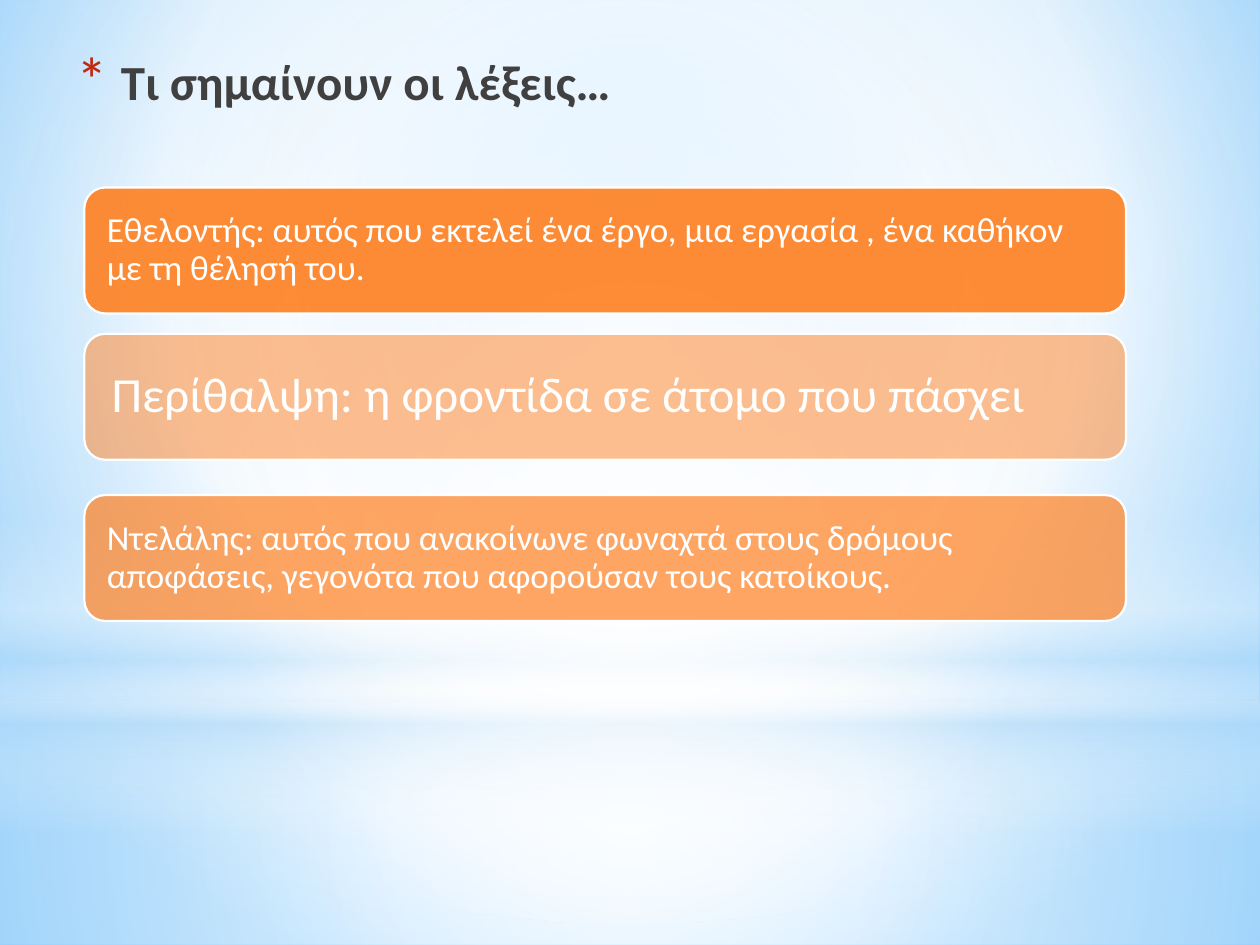
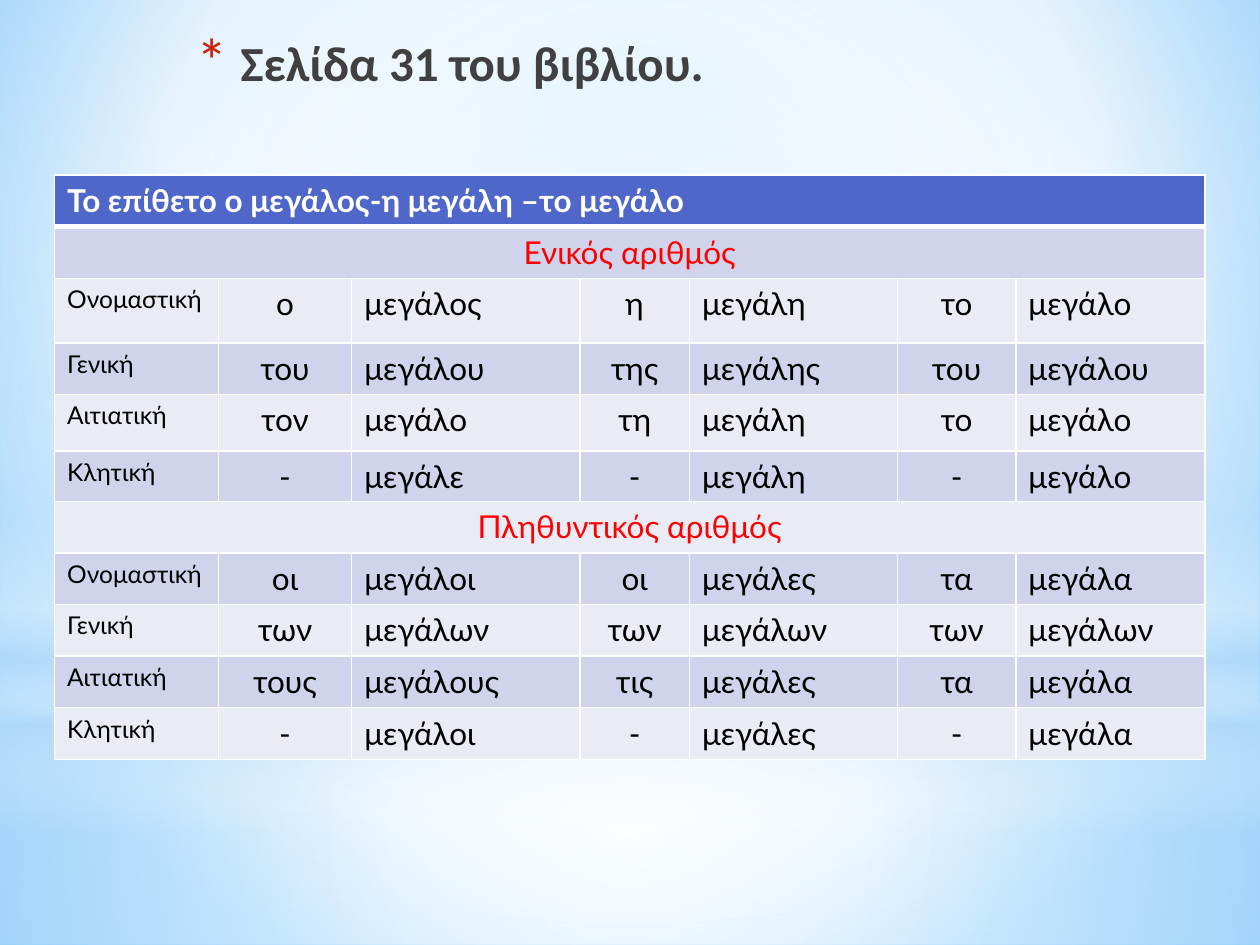
import dataclasses
import lxml.etree
import pptx
import pptx.dml.color
import pptx.enum.shapes
import pptx.enum.text
import pptx.oxml
import pptx.oxml.ns
import pptx.util

Cm = pptx.util.Cm
Pt = pptx.util.Pt
RGB = pptx.dml.color.RGBColor.from_string
qn = pptx.oxml.ns.qn
KIND = pptx.enum.shapes.MSO_SHAPE
ALIGN = pptx.enum.text.PP_ALIGN
ANCHOR = pptx.enum.text.MSO_ANCHOR


@dataclasses.dataclass
class Theme:
    white: str = "FFFFFF"
    black: str = "000000"
    title: str = "404040"
    star: str = "C3260C"
    card: str = "FF8021"
    head: str = "4E67C8"
    odd: str = "D0D3EB"
    even: str = "E9EBF5"
    red: str = "FF0000"
    sky: str = "B4DCFA"
    pale: str = "9ED5FF"
    deep: str = "5BB9FF"
    font: str = "Calibri"
    grid: str = "Lato"
    large: int = 28
    mid: int = 20
    body: int = 18
    small: int = 14


theme = Theme()


def blend(fill, root, stops, shade):
    """Give a gradient fill; each stop is place, colour, opacity in percent."""
    fill.solid()
    marks = "".join(
        f'<a:gs pos="{place * 1000}"><a:srgbClr val="{tint}">'
        f'<a:alpha val="{alpha * 1000}"/></a:srgbClr></a:gs>'
        for place, tint, alpha in stops)
    if shade is None:
        way = '<a:lin ang="5400000" scaled="0"/>'
    else:
        sides = " ".join(f'{side}="{part * 1000}"' for side, part in zip("ltrb", shade))
        way = f'<a:path path="circle"><a:fillToRect {sides}/></a:path>'
    old = root.find(".//" + qn("a:solidFill"))
    old.getparent().replace(old, pptx.oxml.parse_xml(
        f'<a:gradFill {pptx.oxml.ns.nsdecls("a")} rotWithShape="1">'
        f"<a:gsLst>{marks}</a:gsLst>{way}</a:gradFill>"))


def write(para, text, font, size, tint, bold=False):
    run = para.add_run()
    run.text = text
    run.font.name = font
    run.font.size = Pt(size)
    run.font.color.rgb = RGB(tint)
    run.font.bold = bold


deck = pptx.Presentation()
deck.slide_width, deck.slide_height = Cm(25.4), Cm(19.05)

# Shared backdrop layers: kind, top, height, stops, focus
core = (50, 50, 50, 50)
white, sky = theme.white, theme.sky
layers = [
    (KIND.RECTANGLE, 14.17, 4.88, [(0, white, 91), (37, white, 76), (100, sky, 79)], core),
    (KIND.RECTANGLE, 0, 14.17, [(0, white, 89), (48, white, 62), (100, sky, 79)], core),
    (KIND.RECTANGLE, 10.46, 6.35, [(0, white, 0), (29, white, 30), (45, sky, 40),
                                   (55, white, 26), (65, sky, 60), (100, white, 0)], None),
    (KIND.OVAL, 4.45, 14.17, [(0, white, 100), (56, white, 0)], core),
]
# Titles: text, left, top, width, height
titles = [
    ("Τι σημαίνουν οι λέξεις…", 1.3, 0.91, 19.89, 1.4),
    ("Σελίδα 31 του βιβλίου.", 3.71, 0.53, 18.08, 2.01),
]
slides = []
for text, left, top, width, height in titles:
    slide = deck.slides.add_slide(deck.slide_layouts[6])
    slides.append(slide)
    fill = slide.background.fill
    blend(fill, slide.element.find(".//" + qn("p:bgPr")),
          [(0, theme.pale, 100), (60, white, 100), (100, theme.deep, 100)], (20, 10, 20, 60))
    for kind, y, depth, stops, shade in layers:
        layer = slide.shapes.add_shape(kind, 0, Cm(y), deck.slide_width, Cm(depth))
        layer.shadow.inherit = False
        blend(layer.fill, layer.element.spPr, stops, shade)
        layer.line.fill.background()

    # Title with its star bullet
    box = slide.shapes.add_textbox(Cm(left), Cm(top), Cm(width), Cm(height))
    box.text_frame.word_wrap = True
    para = box.text_frame.paragraphs[0]
    props = para._p.get_or_add_pPr()
    props.set("marL", str(Cm(0.89)))
    props.set("indent", str(Cm(-0.89)))
    tint = lxml.etree.SubElement(props, qn("a:buClr"))
    lxml.etree.SubElement(tint, qn("a:srgbClr"), val=theme.star)
    lxml.etree.SubElement(props, qn("a:buSzPct"), val="128000")
    lxml.etree.SubElement(props, qn("a:buFont"), typeface=theme.font)
    lxml.etree.SubElement(props, qn("a:buChar"), char="*")
    write(para, text, theme.font, theme.large, theme.title, True)

words, forms = slides

# Word cards: text, top, opacity, type size, inset
cards = [
    ("Εθελοντής: αυτός που εκτελεί ένα έργο, μια εργασία , ένα καθήκον με τη θέλησή του.",
     3.78, 90, theme.mid, 0.33),
    ("Περίθαλψη: η φροντίδα σε άτομο που πάσχει", 6.73, 50, theme.large, 0.43),
    ("Ντελάλης: αυτός που ανακοίνωνε φωναχτά στους δρόμους αποφάσεις, "
     "γεγονότα που αφορούσαν τους κατοίκους.", 9.98, 70, theme.mid, 0.33),
]
for text, top, alpha, size, inset in cards:
    card = words.shapes.add_shape(KIND.ROUNDED_RECTANGLE, Cm(1.7), Cm(top), Cm(21), Cm(2.54))
    card.shadow.inherit = False
    card.fill.solid()
    card.fill.fore_color.rgb = RGB(theme.card)
    tint = card.element.spPr.find(qn("a:solidFill")).find(qn("a:srgbClr"))
    lxml.etree.SubElement(tint, qn("a:alpha"), val=str(alpha * 1000))
    card.line.color.rgb = RGB(white)
    card.line.width = Pt(1.25)
    frame = card.text_frame
    frame.word_wrap = True
    frame.vertical_anchor = ANCHOR.MIDDLE
    frame.margin_left = frame.margin_right = Cm(inset)
    frame.margin_top = frame.margin_bottom = Cm(inset)
    para = frame.paragraphs[0]
    para.alignment = ALIGN.LEFT
    para.line_spacing = 0.9
    write(para, text, theme.font, size, white)

# Table of forms; a row with one entry spans all columns
rows = [
    ["Το επίθετο ο μεγάλος-η μεγάλη –το μεγάλο"],
    ["Ενικός αριθμός"],
    "Ονομαστική ο μεγάλος η μεγάλη το μεγάλο".split(),
    "Γενική του μεγάλου της μεγάλης του μεγάλου".split(),
    "Αιτιατική τον μεγάλο τη μεγάλη το μεγάλο".split(),
    "Κλητική - μεγάλε - μεγάλη - μεγάλο".split(),
    ["Πληθυντικός αριθμός"],
    "Ονομαστική οι μεγάλοι οι μεγάλες τα μεγάλα".split(),
    "Γενική των μεγάλων των μεγάλων των μεγάλων".split(),
    "Αιτιατική τους μεγάλους τις μεγάλες τα μεγάλα".split(),
    "Κλητική - μεγάλοι - μεγάλες - μεγάλα".split(),
]
widths = [3.3, 2.69, 4.6, 2.21, 4.19, 2.39, 3.81]
heights = {2: 1.3, 4: 1.14, 5: 1.0}
table = forms.shapes.add_table(len(rows), len(widths), Cm(1.1), Cm(3.53),
                               Cm(sum(widths)), Cm(11.86)).table
table.horz_banding = False
for col, width in zip(table.columns, widths):
    col.width = Cm(width)

for r, row in enumerate(rows):
    table.rows[r].height = Cm(heights.get(r, 1.04))
    if len(row) == 1:
        table.cell(r, 0).merge(table.cell(r, len(widths) - 1))
    for c in range(len(widths)):
        cell = table.cell(r, c)
        cell.fill.solid()
        cell.fill.fore_color.rgb = RGB(
            theme.head if r == 0 else theme.odd if r % 2 else theme.even)

        # White cell borders, heavy under the heading
        props = cell._tc.get_or_add_tcPr()
        for spot, side in enumerate("LRTB"):
            thick = 3 if (r, side) in ((0, "B"), (1, "T")) else 1
            props.insert(spot, pptx.oxml.parse_xml(
                f'<a:ln{side} {pptx.oxml.ns.nsdecls("a")} w="{Pt(thick)}"><a:solidFill>'
                f'<a:srgbClr val="{white}"/></a:solidFill></a:ln{side}>'))

        # Cell text
        if c >= len(row):
            continue
        para = cell.text_frame.paragraphs[0]
        size, tint = theme.body, theme.black
        if r == 0:
            tint = white
        elif len(row) == 1:
            tint = theme.red
            para.alignment = ALIGN.CENTER
        elif c == 0:
            size = theme.small
        elif c % 2:
            para.alignment = ALIGN.CENTER
        write(para, row[c], theme.grid, size, tint, r == 0)

deck.save("out.pptx")
